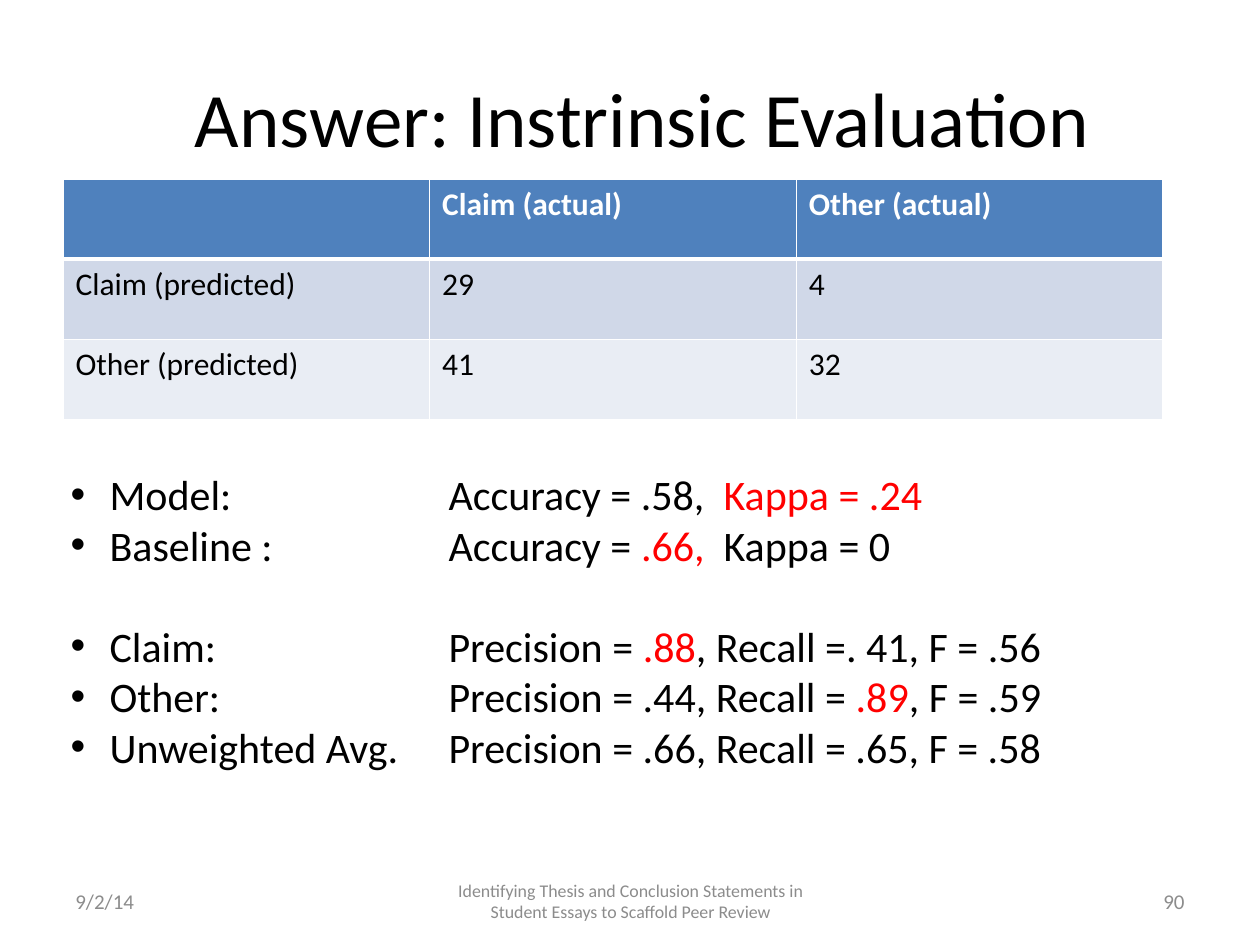
from lxml.etree import SubElement
from pptx import Presentation
from pptx.dml.color import RGBColor
from pptx.enum.text import MSO_ANCHOR as Anchor, MSO_AUTO_SIZE as AutoSize, PP_ALIGN as Align
from pptx.oxml import parse_xml
from pptx.oxml.ns import nsdecls, qn
from pptx.util import Inches, Pt

FONT = "Calibri"
COLORS = {
    "text": "000000",
    "accent": "FF0000",
    "footer": "8C8C8C",
    "white": "FFFFFF",
    "header": "4F81BD",
    "odd_row": "D0D8E8",
    "even_row": "E9EDF4",
}
CONFUSION = [
    ["", "Claim (actual)", "Other (actual)"],
    ["Claim (predicted)", "29", "4"],
    ["Other (predicted)", "41", "32"],
]
SCORES = [
    ("Model:", [("Accuracy = .58,  ", "text"), ("Kappa = .24", "accent")]),
    ("Baseline :", [("Accuracy = ", "text"), (".66,  ", "accent"), ("Kappa = 0", "text")]),
    ("Claim:", [("Precision = ", "text"), (".88", "accent"), (", Recall =. 41, F = .56", "text")]),
    ("Other:", [("Precision = .44, Recall = ", "text"), (".89", "accent"), (", F = .59", "text")]),
    ("Unweighted Avg.", [("Precision = .66, Recall = .65, F = .58", "text")]),
]
SECOND_GROUP = "Claim:"


def place(shape, left, top, width, height):
    shape.left, shape.top = Inches(left), Inches(top)
    shape.width, shape.height = Inches(width), Inches(height)


def style_font(font, size, color, bold=False):
    font.name = FONT
    font.size = Pt(size)
    font.bold = bold
    font.color.rgb = RGBColor.from_string(COLORS[color])


def fill_title(title, text):
    place(title, 0.5, 0.3, 9.2, 1.25)
    frame = title.text_frame
    frame.text = text
    frame.vertical_anchor = Anchor.MIDDLE
    paragraph = frame.paragraphs[0]
    paragraph.alignment = Align.CENTER
    style_font(paragraph.font, 44, "text")


def add_footer(slide, text, left, width, size, alignment):
    box = slide.shapes.add_textbox(Inches(left), Inches(6.95), Inches(width), Inches(0.4))
    frame = box.text_frame
    frame.word_wrap = True
    frame.vertical_anchor = Anchor.MIDDLE
    frame.text = text
    paragraph = frame.paragraphs[0]
    paragraph.alignment = alignment
    style_font(paragraph.font, size, "footer")


def set_borders(cell, bottom_width):
    properties = cell._tc.get_or_add_tcPr()
    widths = {"lnL": 1, "lnR": 1, "lnT": 1, "lnB": bottom_width}
    for index, (side, width) in enumerate(widths.items()):
        line = parse_xml(
            f'<a:{side} {nsdecls("a")} w="{Pt(width)}"><a:solidFill>'
            f'<a:srgbClr val="{COLORS["white"]}"/></a:solidFill></a:{side}>'
        )
        properties.insert(index, line)


def add_confusion_table(slide):
    frame = slide.shapes.add_table(
        len(CONFUSION), len(CONFUSION[0]),
        Inches(0.5), Inches(1.42), Inches(8.73), Inches(1.91),
    )
    fills = ["header", "odd_row", "even_row"]
    for row_index, values in enumerate(CONFUSION):
        is_header = row_index == 0
        for column_index, value in enumerate(values):
            cell = frame.table.cell(row_index, column_index)
            cell.text = value
            cell.fill.solid()
            cell.fill.fore_color.rgb = RGBColor.from_string(COLORS[fills[row_index]])
            font = cell.text_frame.paragraphs[0].font
            style_font(font, 18, "white" if is_header else "text", is_header)
            set_borders(cell, 3 if is_header else 1)


def set_bullet(paragraph, indent, tab):
    properties = paragraph._p.get_or_add_pPr()
    properties.set("marL", str(Inches(indent)))
    properties.set("indent", str(-Inches(indent)))
    SubElement(properties, qn("a:buFont"), typeface="Arial")
    SubElement(properties, qn("a:buChar"), char="•")
    tabs = SubElement(properties, qn("a:tabLst"))
    SubElement(tabs, qn("a:tab"), pos=str(Inches(tab)), algn="l")


def fill_scores(body):
    place(body, 0.46, 3.67, 8.77, 2.52)
    frame = body.text_frame
    frame.word_wrap = True
    frame.auto_size = AutoSize.SHAPE_TO_FIT_TEXT
    for index, (label, parts) in enumerate(SCORES):
        paragraph = frame.paragraphs[0] if index == 0 else frame.add_paragraph()
        paragraph.space_before = Pt(29 if label == SECOND_GROUP else 0)
        set_bullet(paragraph, 0.31, 3)
        for text, color in [(label + "\t", "text"), *parts]:
            run = paragraph.add_run()
            run.text = text
            style_font(run.font, 24, color)


def main():
    presentation = Presentation()
    presentation.slide_width, presentation.slide_height = Inches(10), Inches(7.5)
    slide = presentation.slides.add_slide(presentation.slide_layouts[1])
    add_footer(slide, "9/2/14", 0.5, 2.33, 12, Align.LEFT)
    add_footer(
        slide,
        "Identifying Thesis and Conclusion Statements in Student Essays to Scaffold Peer Review",
        3.42, 3.17, 10.2, Align.CENTER,
    )
    add_footer(slide, "90", 7.17, 2.33, 12, Align.RIGHT)
    fill_title(slide.shapes.title, "Answer: Instrinsic Evaluation")
    add_confusion_table(slide)
    fill_scores(slide.placeholders[1])
    presentation.save("out.pptx")


if __name__ == "__main__":
    main()
